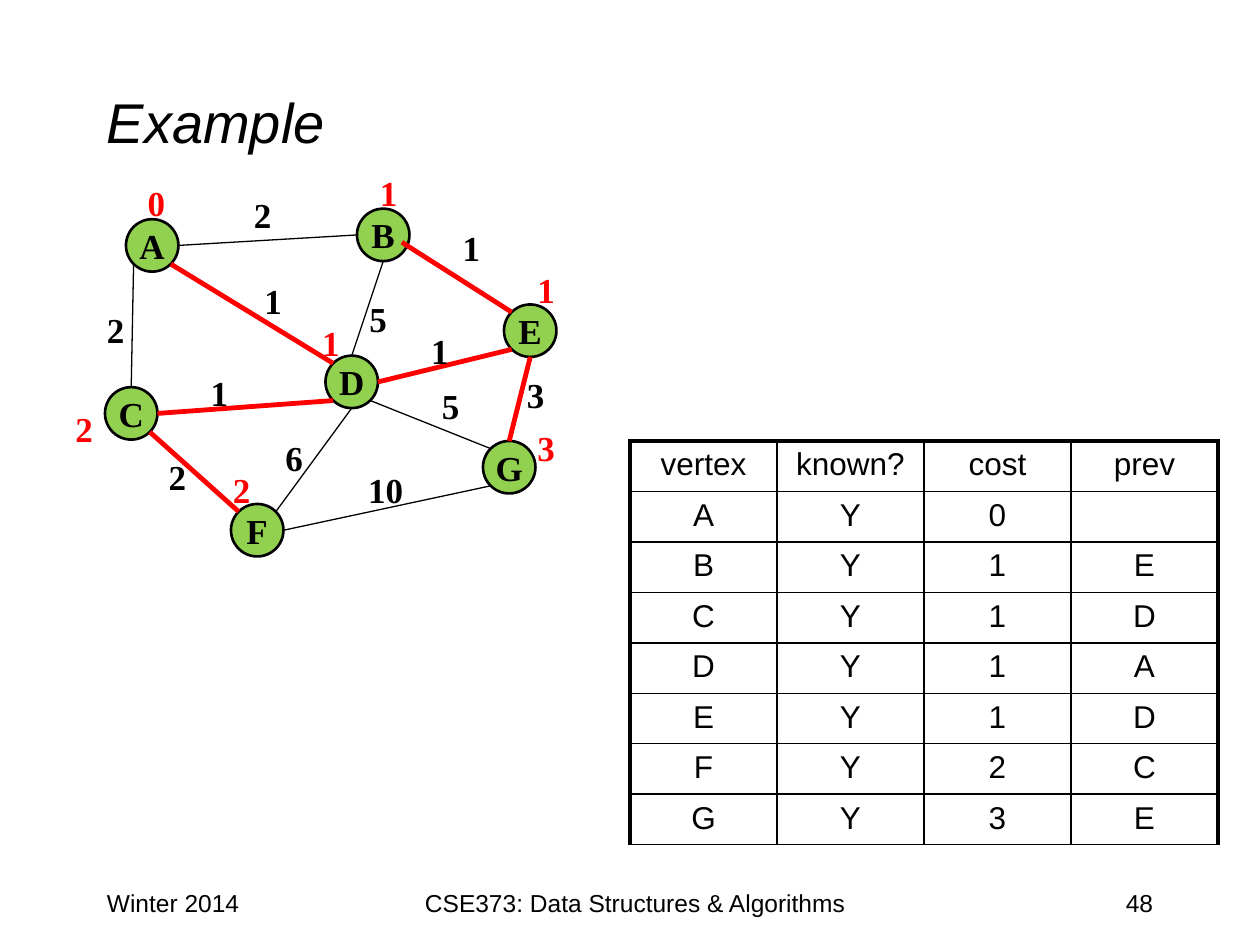
from dataclasses import dataclass

import pptx
import pptx.dml.color
import pptx.enum.shapes
import pptx.enum.text
import pptx.oxml
import pptx.oxml.ns
import pptx.util

Pt = pptx.util.Pt
Align = pptx.enum.text.PP_ALIGN
Anchor = pptx.enum.text.MSO_ANCHOR


@dataclass(frozen=True)
class Theme:
    ink: str = "000000"
    path_color: str = "FF0000"
    vertex_fill: str = "92D050"
    sans: str = "Arial"
    serif: str = "Times New Roman"
    title_size: float = 32
    graph_size: float = 20
    table_size: float = 18
    footer_size: float = 14
    edge_width: float = 0.75
    path_width: float = 2.75
    vertex_width: float = 1.5
    grid_width: float = 1
    frame_width: float = 2.25


THEME = Theme()
DIAMETER = 30
CENTERS = {
    "A": (87, 140.25),
    "B": (219, 134.25),
    "C": (75, 236.25),
    "D": (201, 218.25),
    "E": (303, 189),
    "F": (147, 303),
    "G": (291, 267),
}
DIAGONAL = 0.71
RIM = {
    "n": (0, -1),
    "s": (0, 1),
    "w": (-1, 0),
    "e": (1, 0),
    "nw": (-DIAGONAL, -DIAGONAL),
    "ne": (DIAGONAL, -DIAGONAL),
    "sw": (-DIAGONAL, DIAGONAL),
    "se": (DIAGONAL, DIAGONAL),
    "inner": (DIAGONAL, 0.28),
}
PLAIN_EDGES = [
    ("A", "sw", "C", "n"),
    ("B", "w", "A", "e"),
    ("D", "n", "B", "s"),
    ("D", "s", "F", "ne"),
    ("D", "se", "G", "nw"),
    ("F", "e", "G", "sw"),
]
PATH_EDGES = [
    ("A", "se", "D", "nw"),
    ("C", "e", "D", "sw"),
    ("E", "sw", "D", "e"),
    ("C", "se", "F", "nw"),
    ("G", "n", "E", "s"),
    ("B", "inner", "E", "nw"),
]
WEIGHTS = [
    ("2", 138, 107.25), ("1", 144, 156.25), ("2", 54, 173),
    ("5", 204, 166.5), ("1", 113.25, 208.5), ("1", 239.25, 184.5),
    ("1", 257.25, 125.75), ("2", 89.25, 256.5), ("6", 156, 246),
    ("5", 245.5, 216), ("3", 294, 210), ("10", 203.25, 264),
]
COSTS = [
    ("0", 77.25, 100), ("1", 210, 94.5), ("2", 126, 264),
    ("2", 36, 229.5), ("1", 177, 180), ("1", 300, 150), ("3", 300, 240),
]
ROWS = [
    ("vertex", "known?", "cost", "prev"),
    ("A", "Y", "0", ""),
    ("B", "Y", "1", "E"),
    ("C", "Y", "1", "D"),
    ("D", "Y", "1", "A"),
    ("E", "Y", "1", "D"),
    ("F", "Y", "2", "C"),
    ("G", "Y", "3", "E"),
]


def rgb(color):
    return pptx.dml.color.RGBColor.from_string(color)


def write(paragraph, words, size, font, color=THEME.ink, bold=False,
          italic=False, align=Align.LEFT):
    paragraph.alignment = align
    run = paragraph.add_run()
    run.text = words
    run.font.size = Pt(size)
    run.font.name = font
    run.font.bold = bold
    run.font.italic = italic
    run.font.color.rgb = rgb(color)


def add_text(slide, words, box, size, font, wrap=True, anchor=Anchor.TOP, **style):
    frame = slide.shapes.add_textbox(*map(Pt, box)).text_frame
    frame.word_wrap = wrap
    frame.vertical_anchor = anchor
    if not wrap:
        frame.auto_size = pptx.enum.text.MSO_AUTO_SIZE.SHAPE_TO_FIT_TEXT
    write(frame.paragraphs[0], words, size, font, **style)


def add_label(slide, words, left, top, color):
    width = 14.5 + 10 * len(words)
    add_text(slide, words, (left, top, width, 31.5), THEME.graph_size,
             THEME.serif, wrap=False, color=color, bold=True)


def add_vertex(slide, name):
    x, y = CENTERS[name]
    vertex = slide.shapes.add_shape(
        pptx.enum.shapes.MSO_SHAPE.OVAL, Pt(x - DIAMETER / 2),
        Pt(y - DIAMETER / 2), Pt(DIAMETER), Pt(DIAMETER))
    vertex.shadow.inherit = False
    vertex.fill.solid()
    vertex.fill.fore_color.rgb = rgb(THEME.vertex_fill)
    vertex.line.color.rgb = rgb(THEME.ink)
    vertex.line.width = Pt(THEME.vertex_width)
    vertex.text_frame.word_wrap = False
    vertex.text_frame.vertical_anchor = Anchor.MIDDLE
    write(vertex.text_frame.paragraphs[0], name, THEME.graph_size,
          THEME.serif, bold=True, align=Align.CENTER)


def rim_point(name, side):
    return [Pt(center + DIAMETER / 2 * step)
            for center, step in zip(CENTERS[name], RIM[side])]


def add_edge(slide, start, start_side, end, end_side, color, width):
    edge = slide.shapes.add_connector(
        pptx.enum.shapes.MSO_CONNECTOR.STRAIGHT,
        *rim_point(start, start_side), *rim_point(end, end_side))
    edge.line.color.rgb = rgb(color)
    edge.line.width = Pt(width)
    edge._element.spPr.append(pptx.oxml.parse_xml(
        f"<a:effectLst {pptx.oxml.ns.nsdecls('a')}/>"))


def add_border(cell, side, width):
    cell._tc.get_or_add_tcPr().append(pptx.oxml.parse_xml(
        f'<a:ln{side} {pptx.oxml.ns.nsdecls("a")} w="{Pt(width)}">'
        f'<a:solidFill><a:srgbClr val="{THEME.ink}"/></a:solidFill></a:ln{side}>'))


def add_cost_table(slide, rows, left, top, column_width, row_height):
    columns = len(rows[0])
    table = slide.shapes.add_table(
        len(rows), columns, Pt(left), Pt(top),
        Pt(column_width * columns), Pt(row_height * len(rows))).table
    table.first_row = False
    table.horz_banding = False
    for r, row in enumerate(rows):
        table.rows[r].height = Pt(row_height)
        for c, words in enumerate(row):
            cell = table.cell(r, c)
            framed = {"L": c == 0, "R": c == columns - 1, "T": r == 0, "B": False}
            for side, outer in framed.items():
                add_border(cell, side, THEME.frame_width if outer else THEME.grid_width)
            cell.fill.background()
            if words:
                write(cell.text_frame.paragraphs[0], words, THEME.table_size,
                      THEME.sans, align=Align.CENTER)


def main():
    deck = pptx.Presentation()
    deck.slide_width, deck.slide_height = Pt(720), Pt(540)
    slide = deck.slides.add_slide(deck.slide_layouts[6])

    add_text(slide, "Example", (54, 24, 612, 90), THEME.title_size, THEME.sans,
             anchor=Anchor.MIDDLE, italic=True)
    for words, left, width, align in [
        ("Winter 2014", 54, 150, Align.LEFT),
        ("CSE373: Data Structures & Algorithms", 228, 270, Align.CENTER),
        ("48", 516, 150, Align.RIGHT),
    ]:
        add_text(slide, words, (left, 504, width, 36), THEME.footer_size,
                 THEME.sans, align=align)

    for name in CENTERS:
        add_vertex(slide, name)
    for edges, color, width in [
        (PLAIN_EDGES, THEME.ink, THEME.edge_width),
        (PATH_EDGES, THEME.path_color, THEME.path_width),
    ]:
        for edge in edges:
            add_edge(slide, *edge, color, width)
    for labels, color in [(WEIGHTS, THEME.ink), (COSTS, THEME.path_color)]:
        for label in labels:
            add_label(slide, *label, color)

    add_cost_table(slide, ROWS, left=360, top=252, column_width=84, row_height=28.8)
    deck.save("out.pptx")


if __name__ == "__main__":
    main()
